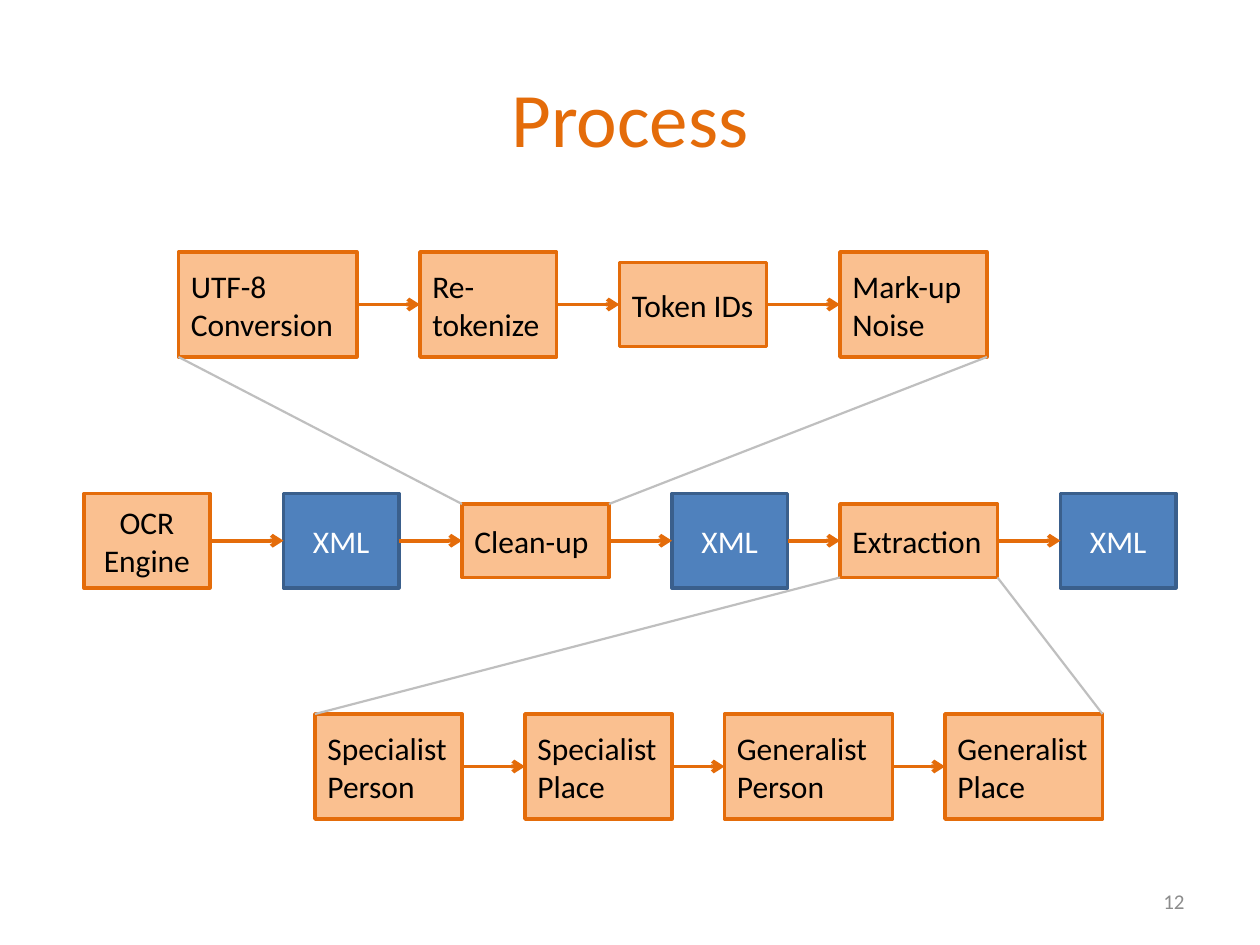
from pptx import Presentation
from pptx.dml.color import RGBColor
from pptx.enum.shapes import MSO_CONNECTOR as Link, MSO_SHAPE as Shape
from pptx.enum.text import MSO_ANCHOR as Anchor, PP_ALIGN as Align
from pptx.oxml.ns import qn
from pptx.util import Emu, Pt
from lxml.etree import SubElement

SCALE = 7620  # 120 px to the inch
ORANGE, GREY = "E46C0A", "BFBFBF"

# style: fill, line, text colour, alignment
STEP = ("FAC090", ORANGE, "000000", Align.LEFT)
START = ("FAC090", ORANGE, "000000", Align.CENTER)
DATA = ("4F81BD", "3A5F8C", "FFFFFF", Align.CENTER)

# row: centre line, then boxes as (text, left, width, height, style)
ROWS = {
    "cleanup": (290, [
        ("UTF-8 Conversion", 170, 170, 100, STEP),
        ("Re-tokenize", 400, 130, 100, STEP),
        ("Token IDs", 590, 140, 80, STEP),
        ("Mark-up Noise", 800, 140, 100, STEP),
    ]),
    "main": (515, [
        ("OCR Engine", 80, 120, 90, START),
        ("XML", 270, 110, 90, DATA),
        ("Clean-up", 440, 140, 70, STEP),
        ("XML", 640, 110, 90, DATA),
        ("Extraction", 800, 150, 70, STEP),
        ("XML", 1010, 110, 90, DATA),
    ]),
    "extract": (730, [
        ("Specialist Person", 300, 140, 100, STEP),
        ("Specialist Place", 500, 140, 100, STEP),
        ("Generalist Person", 690, 160, 100, STEP),
        ("Generalist Place", 900, 150, 100, STEP),
    ]),
}


def px(*vals):
    return [Emu(v * SCALE) for v in vals]


def rgb(code):
    return RGBColor.from_string(code)


def write(frame, text, size, color, align):
    frame.word_wrap = True
    frame.vertical_anchor = Anchor.MIDDLE
    para = frame.paragraphs[0]
    para.alignment = align
    run = para.add_run()
    run.text = text
    run.font.name = "Calibri"
    run.font.size = Pt(size)
    run.font.color.rgb = rgb(color)


def add_box(mid, text, left, width, height, style):
    fill, line, color, align = style
    box = slide.shapes.add_shape(
        Shape.RECTANGLE, *px(left, mid - height // 2, width, height))
    box.shadow.inherit = False
    box.fill.solid()
    box.fill.fore_color.rgb = rgb(fill)
    box.line.color.rgb = rgb(line)
    box.line.width = Pt(2)
    write(box.text_frame, text, 18, color, align)
    return box


def add_line(start, end, color, width, arrow=False):
    """Join two points given in EMU."""
    line = slide.shapes.add_connector(Link.STRAIGHT, *start, *end)
    line.line.color.rgb = rgb(color)
    line.line.width = Pt(width)
    props = line._element.spPr
    if arrow:
        SubElement(props.find(qn("a:ln")), qn("a:tailEnd"), type="arrow")
    SubElement(props, qn("a:effectLst"))


def corners(first, last, low):
    """Outer left and right corners of a run of boxes, low or high."""
    return [(x, box.top + (box.height if low else 0))
            for x, box in ((first.left, first), (last.left + last.width, last))]


def zoom(upper, lower):
    """Link the lower corners of one run to the upper corners of the next."""
    for start, end in zip(corners(upper[0], upper[-1], True),
                          corners(lower[0], lower[-1], False)):
        add_line(start, end, GREY, 1.25)


deck = Presentation()
deck.slide_width, deck.slide_height = px(1200, 900)
slide = deck.slides.add_slide(deck.slide_layouts[5])

title = slide.shapes.title
title.left, title.top, title.width, title.height = px(60, 36, 1080, 150)
write(title.text_frame, "Process", 44, ORANGE, Align.CENTER)

made = {}
for name, (mid, items) in ROWS.items():
    boxes = made[name] = [add_box(mid, *item) for item in items]
    y = mid * SCALE
    for a, b in zip(boxes, boxes[1:]):
        add_line((a.left + a.width, y), (b.left, y), ORANGE, 2.25, True)

main = made["main"]
zoom(made["cleanup"], [main[2]])
zoom([main[4]], made["extract"])

number = slide.shapes.add_textbox(*px(860, 834, 280, 48))
write(number.text_frame, "12", 12, "8C8C8C", Align.RIGHT)

deck.save("out.pptx")
